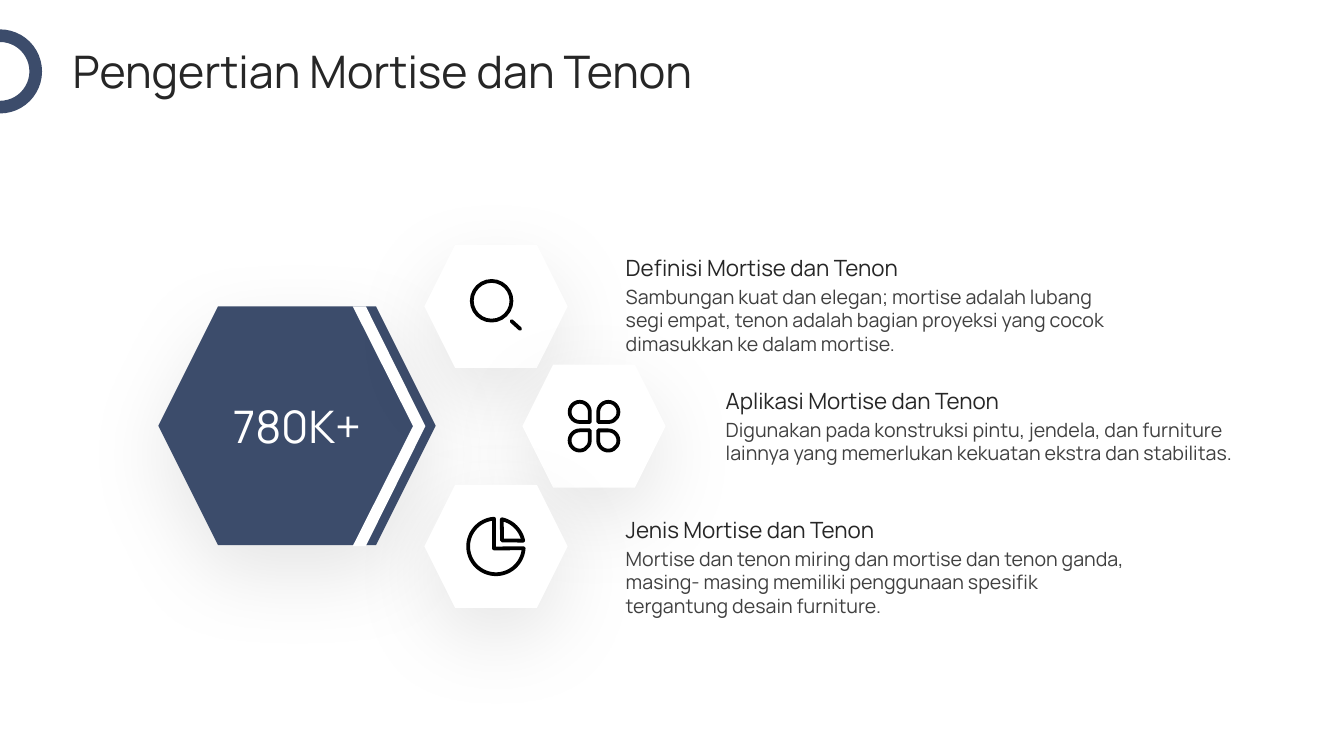
from math import cos, radians, sin

from lxml import etree
from pptx import Presentation
from pptx import util as u
from pptx.dml.color import RGBColor
from pptx.enum import shapes, text
from pptx.oxml import ns

NAVY = RGBColor(0x3C, 0x4C, 0x6B)
WHITE = RGBColor(0xFF, 0xFF, 0xFF)
BLACK = RGBColor(0x00, 0x00, 0x00)
INK = RGBColor(0x26, 0x26, 0x26)
GREY = RGBColor(0x40, 0x40, 0x40)
FORM = shapes.MSO_SHAPE
STROKE = 2.7

TITLE = {"name": "Manrope", "size": u.Pt(32), "bold": False}
HEADING = {"name": "Manrope", "size": u.Pt(16)}
DETAIL = {"name": "Manrope", "size": u.Pt(14)}
FRAME = {
    "margin_left": 0, "margin_right": 0, "margin_top": 0, "margin_bottom": 0,
    "word_wrap": True, "auto_size": text.MSO_AUTO_SIZE.NONE,
}


def apply(target, values):
    """Set every attribute named in values on the target."""
    for name, value in values.items():
        setattr(target, name, value)


def write(box, words, style, colour, align=text.PP_ALIGN.LEFT, anchor=text.MSO_ANCHOR.TOP):
    """Fill a box with one formatted paragraph."""
    frame = box.text_frame
    apply(frame, FRAME | {"vertical_anchor": anchor})
    para = frame.paragraphs[0]
    para.alignment = align
    span = para.add_run()
    span.text = words
    apply(span.font, style)
    span.font.color.rgb = colour


def paint(shape, fill=None, line=None, weight=STROKE):
    """Give a shape a plain fill and outline without shadow."""
    shape.shadow.inherit = False
    if fill is None:
        shape.fill.background()
    else:
        shape.fill.solid()
        shape.fill.fore_color.rgb = fill
    if line is None:
        shape.line.fill.background()
    else:
        shape.line.color.rgb = line
        shape.line.width = u.Pt(weight)
    return shape


def add_form(page, form, left, top, width, height, **colours):
    """Add a painted preset shape."""
    place = [u.Cm(length) for length in (left, top, width, height)]
    return paint(page.shapes.add_shape(form, *place), **colours)


def add_outline(page, points, **colours):
    """Add a painted closed polygon."""
    corners = [(u.Cm(x), u.Cm(y)) for x, y in points]
    builder = page.shapes.build_freeform(*corners[0], scale=1.0)
    builder.add_line_segments(corners[1:], close=True)
    return paint(builder.convert_to_shape(), **colours)


def add_hexagon(page, left, top, width, height, fill):
    """Add a hexagon with a wide soft shadow below it."""
    hexagon = add_form(page, FORM.HEXAGON, left, top, width, height, fill=fill)
    effects = hexagon._element.spPr.find(ns.qn("a:effectLst"))
    shadow = etree.SubElement(
        effects, ns.qn("a:outerShdw"), blurRad=str(u.Pt(60)), dist=str(u.Pt(20)),
        dir="5400000", algn="t", rotWithShape="0")
    colour = etree.SubElement(shadow, ns.qn("a:srgbClr"), val=str(BLACK))
    etree.SubElement(colour, ns.qn("a:alpha"), val="10000")
    return hexagon


def add_magnifier(page, x, y):
    """Draw a lens and its handle around a centre."""
    add_form(page, FORM.OVAL, x - 0.61, y - 0.64, 1, 1, line=BLACK)
    handle = page.shapes.add_connector(
        shapes.MSO_CONNECTOR.STRAIGHT,
        u.Cm(x + 0.39), u.Cm(y + 0.37), u.Cm(x + 0.61), u.Cm(y + 0.57))
    handle.line.color.rgb = BLACK
    handle.line.width = u.Pt(STROKE)
    properties = handle._element.spPr
    properties.find(ns.qn("a:ln")).set("cap", "rnd")
    etree.SubElement(properties, ns.qn("a:effectLst"))


def add_clover(page, x, y):
    """Draw four petals that point to a centre."""
    size, offset = 0.51, 0.36
    for side, level, turn in ((-1, -1, 90), (1, -1, 180), (-1, 1, 0), (1, 1, 270)):
        petal = add_form(
            page, FORM.TEAR, x + side * offset - size / 2,
            y + level * offset - size / 2, size, size, line=BLACK)
        petal.rotation = turn


def add_pie(page, x, y):
    """Draw a pie with its upper right slice set apart."""
    radius = 0.7
    for corner_x, corner_y, start, end in ((-0.05, 0.05, 4, 266), (0.15, -0.15, 282, 348)):
        points = [(x + corner_x, y + corner_y)]
        for angle in range(start, end + 1, 2):
            points.append((x + radius * cos(radians(angle)), y + radius * sin(radians(angle))))
        add_outline(page, points, line=BLACK)


def add_text(page, words, place, style, colour):
    """Add a text box at a place given in centimetres."""
    box = page.shapes.add_textbox(*[u.Cm(length) for length in place])
    write(box, words, style, colour)


def add_topic(page, heading, detail, left, top, width):
    """Add a heading with its explanation below."""
    add_text(page, heading, (left, top, width, 0.56), HEADING, INK)
    add_text(page, detail, (left, top + 0.77, width, 2.21), DETAIL, GREY)


def add_title(page, words):
    """Place and fill the title placeholder."""
    title = page.shapes.title
    apply(title, {"left": u.Cm(1.83), "top": u.Cm(1.19),
                  "width": u.Cm(30.18), "height": u.Cm(1.19)})
    write(title, words, TITLE, INK, anchor=text.MSO_ANCHOR.MIDDLE)


def main():
    """Build the slide and save it."""
    deck = Presentation()
    deck.slide_width, deck.slide_height = u.Cm(33.87), u.Cm(19.05)
    page = deck.slides.add_slide(deck.slide_layouts[5])

    figure = add_hexagon(page, 3.99, 7.72, 6.99, 6.02, NAVY)
    write(figure, "780K+", TITLE, WHITE, text.PP_ALIGN.CENTER, text.MSO_ANCHOR.MIDDLE)

    width, height = 3.61, 3.1
    icons = ((add_magnifier, 12.5, 7.72), (add_clover, 14.97, 10.74), (add_pie, 12.5, 13.77))
    for _, x, y in icons:
        add_hexagon(page, x - width / 2, y - height / 2, width, height, WHITE)
    for draw, x, y in icons:
        draw(page, x, y)

    add_outline(page, [(9.22, 7.72), (8.89, 7.72), (10.41, 10.74), (8.89, 13.76),
                       (9.22, 13.76), (10.72, 10.74)], fill=WHITE)

    add_topic(page, "Definisi Mortise dan Tenon",
              "Sambungan kuat dan elegan; mortise adalah lubang segi empat, tenon adalah "
              "bagian proyeksi yang cocok dimasukkan ke dalam mortise.", 15.77, 6.4, 12.76)
    add_topic(page, "Aplikasi Mortise dan Tenon",
              "Digunakan pada konstruksi pintu, jendela, dan furniture lainnya yang "
              "memerlukan kekuatan ekstra dan stabilitas.", 18.29, 9.75, 13.18)
    add_topic(page, "Jenis Mortise dan Tenon",
              "Mortise dan tenon miring dan mortise dan tenon ganda, masing- masing "
              "memiliki penggunaan spesifik tergantung desain furniture.", 15.77, 13, 12.76)

    add_form(page, FORM.OVAL, -0.9, 0.9, 1.8, 1.8, line=NAVY, weight=9)
    add_title(page, "Pengertian Mortise dan Tenon")
    deck.save("out.pptx")


if __name__ == "__main__":
    main()
